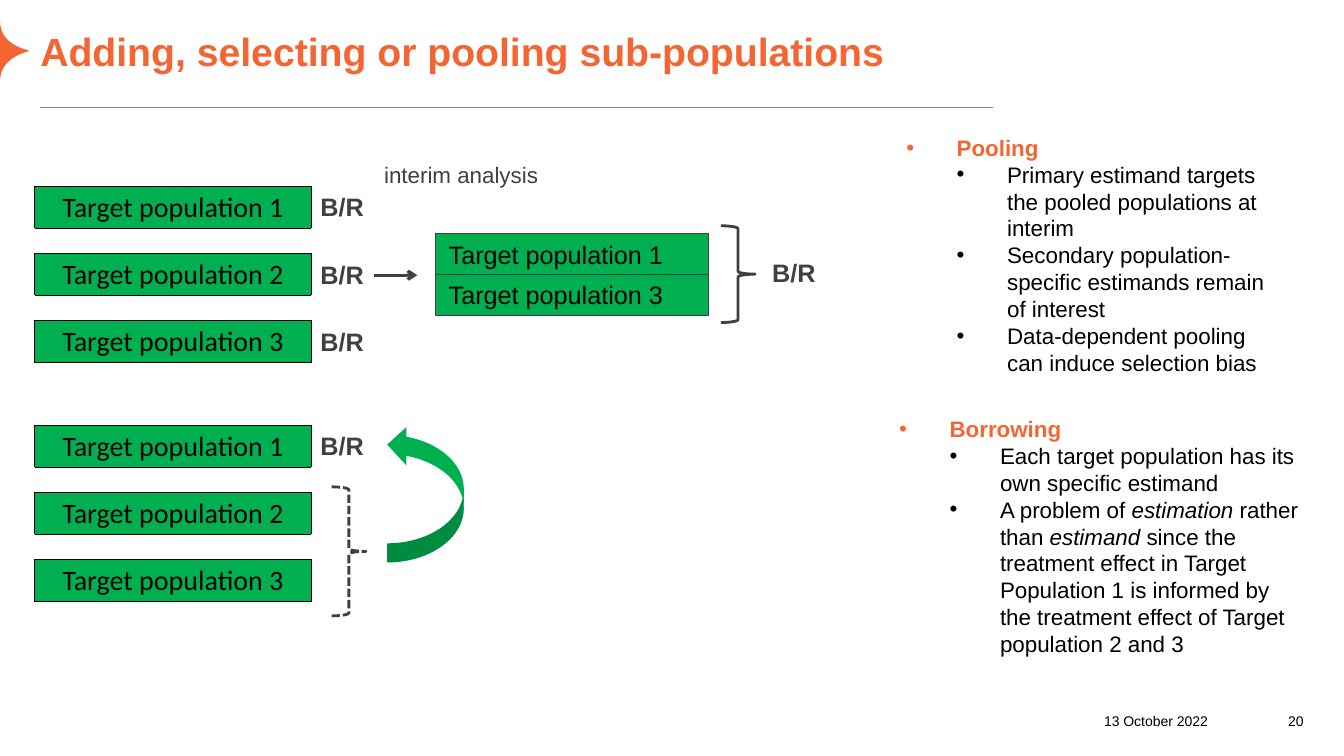
from lxml import etree
from pptx import Presentation
from pptx.dml.color import RGBColor
from pptx.enum.dml import MSO_LINE_DASH_STYLE as Dash
from pptx.enum.shapes import MSO_CONNECTOR as Connector, MSO_SHAPE as Preset
from pptx.enum.text import MSO_ANCHOR as Anchor, PP_ALIGN as Align
from pptx.oxml import parse_xml
from pptx.oxml.ns import nsdecls, qn
from pptx.util import Inches, Pt

# Content: a paragraph is a list of (text, italic) spans
TITLE = "Adding, selecting or pooling sub-populations"
DATE, PAGE_NUMBER = "13 October 2022", "20"
POPULATIONS = ["Target population 1", "Target population 2", "Target population 3"]
POOLED = [POPULATIONS[0], POPULATIONS[2]]
BALANCE, INTERIM = "B/R", "interim analysis"
NOTES = [
    ("Pooling", (8.39, 1.28, 4.28, 2.79), [
        [("Primary estimand targets the pooled populations at interim", False)],
        [("Secondary population-specific estimands remain of interest", False)],
        [("Data-dependent pooling can induce selection bias", False)],
    ]),
    ("Borrowing", (8.32, 4.07, 4.67, 2.79), [
        [("Each target population has its own specific estimand", False)],
        [("A problem of ", False), ("estimation", True), (" rather than ", False),
         ("estimand", True),
         (" since the treatment effect in Target Population 1 is informed by "
          "the treatment effect of Target population 2 and 3", False)],
    ]),
]
ORANGE, GREEN, GREY, BLACK, RULE = "F36633", "00B050", "404040", "000000", "808080"

# Grid, in inches
LEFT, TABLE_WIDTH, TABLE_HEIGHT = 0.34, 2.75, 1.75
ROW = 0.42
GAP = (TABLE_HEIGHT - len(POPULATIONS) * ROW) / (len(POPULATIONS) - 1)
POOL_TOP, BORROW_TOP = 1.85, 4.22
LABEL_LEFT, LABEL_SIZE, LABEL_PITCH = 3.08, (0.76, 0.4), 0.67
POOLED_LEFT, POOLED_TOP, POOLED_WIDTH, POOLED_ROW = 4.32, 2.32, 2.71, 0.405
POOLED_INDENT = 0.13

deck = Presentation()
deck.slide_width, deck.slide_height = Inches(13.33), Inches(7.5)
page = deck.slides.add_slide(deck.slide_layouts[6])


def color(value):
    return RGBColor.from_string(value)


def place(area):
    return [Inches(length) for length in area]


def add_spans(para, spans, size=16, font="Arial", tint=BLACK, bold=False):
    for text, italic in spans:
        span = para.add_run()
        span.text = text
        style = span.font
        style.size, style.name, style.bold, style.italic = Pt(size), font, bold, italic
        style.color.rgb = color(tint)


def add_text(text, area, align=Align.LEFT, anchor=Anchor.TOP, inset=(0, 0), **style):
    frame = page.shapes.add_textbox(*place(area)).text_frame
    frame.word_wrap, frame.vertical_anchor = True, anchor
    frame.margin_left = frame.margin_right = Inches(inset[0])
    frame.margin_top = frame.margin_bottom = Inches(inset[1])
    para = frame.paragraphs[0]
    para.alignment = align
    if text:
        add_spans(para, [(text, False)], **style)
    return frame


def add_label(left, top):
    add_text(BALANCE, (left, top, *LABEL_SIZE), inset=(0.1, 0.05),
             size=18, tint=GREY, bold=True)


def add_preset(preset, area, fill=None, line=None, width=0.75, dash=None):
    shape = page.shapes.add_shape(preset, *place(area))
    shape.shadow.inherit = False
    if fill:
        shape.fill.solid()
        shape.fill.fore_color.rgb = color(fill)
    else:
        shape.fill.background()
    if line:
        shape.line.color.rgb = color(line)
        shape.line.width = Pt(width)
        if dash:
            shape.line.dash_style = dash
    else:
        shape.line.fill.background()
    return shape


def add_line(start, end, tint, width, arrow=False):
    line = page.shapes.add_connector(Connector.STRAIGHT, *place(start + end))
    line.line.color.rgb, line.line.width = color(tint), Pt(width)
    if arrow:
        etree.SubElement(line.line._get_or_add_ln(), qn("a:tailEnd"), type="arrow")
    etree.SubElement(line._element.spPr, qn("a:effectLst"))


def add_borders(cell, sides):
    for side in sides:
        cell._tc.get_or_add_tcPr().append(parse_xml(
            f'<a:ln{side} {nsdecls("a")} w="{Pt(1)}"><a:solidFill>'
            f'<a:srgbClr val="{BLACK}"/></a:solidFill></a:ln{side}>'))


def add_population_table(top):
    count = 2 * len(POPULATIONS) - 1
    table = page.shapes.add_table(
        count, 1, *place((LEFT, top, TABLE_WIDTH, TABLE_HEIGHT))).table
    table.first_row = table.horz_banding = False
    for index in range(count):
        cell, is_gap = table.cell(index, 0), index % 2 == 1
        table.rows[index].height = Inches(GAP if is_gap else ROW)
        cell.margin_left = cell.margin_right = cell.margin_top = Inches(0.01)
        cell.margin_bottom = 0
        cell.vertical_anchor = Anchor.MIDDLE
        para = cell.text_frame.paragraphs[0]
        add_borders(cell, "TB" if is_gap else "LRTB")
        if is_gap:
            cell.fill.background()
            etree.SubElement(para._p, qn("a:endParaRPr"), sz="800")
        else:
            cell.fill.solid()
            cell.fill.fore_color.rgb = color(GREEN)
            para.alignment = Align.CENTER
            add_spans(para, [(POPULATIONS[index // 2], False)], size=20, font="Calibri")


def add_bullet(para, level, spans, **style):
    properties = para._p.get_or_add_pPr()
    properties.set("marL", str(Inches(0.5 + 0.5 * level)))
    properties.set("indent", str(Inches(-0.5)))
    etree.SubElement(properties, qn("a:buFont"), typeface="Arial")
    etree.SubElement(properties, qn("a:buChar"), char="•")
    para.level = level
    add_spans(para, spans, **style)


def curve(start, first, second, end, steps=16):
    for step in range(1, steps + 1):
        t = step / steps
        weights = ((1 - t) ** 3, 3 * t * (1 - t) ** 2, 3 * t * t * (1 - t), t ** 3)
        yield tuple(sum(w * p[axis] for w, p in zip(weights, (start, first, second, end)))
                    for axis in (0, 1))


# Pointed mark at the left edge
upper = list(curve((0, 0.2), (0, 0.36), (0.1, 0.45), (0.28, 0.5)))
lower = list(curve((0.28, 0.51), (0.1, 0.56), (0, 0.66), (0, 0.81)))
builder = page.shapes.build_freeform(0, Inches(0.2), scale=1.0)
builder.add_line_segments([place(point) for point in upper + [(0.29, 0.505)] + lower])
mark = builder.convert_to_shape()
mark.shadow.inherit = False
mark.fill.solid()
mark.fill.fore_color.rgb = color(ORANGE)
mark.line.fill.background()

# Title and footer
add_text(TITLE, (0.4, 0.27, 12.53, 0.47), anchor=Anchor.BOTTOM,
         size=28, tint=ORANGE, bold=True)
add_line((0.4, 1.07), (9.85, 1.07), RULE, 0.75)
for text, left, width in ((DATE, 8.94, 3.04), (PAGE_NUMBER, 12.34, 0.59)):
    add_text(text, (left, 6.94, width, 0.3), align=Align.RIGHT,
             anchor=Anchor.BOTTOM, size=10)

# Pooling diagram
add_population_table(POOL_TOP)
for row in range(len(POPULATIONS)):
    add_label(LABEL_LEFT, POOL_TOP + row * LABEL_PITCH)
add_text(INTERIM, (3.81, 1.6, 2, 0.3), tint=GREY)
add_line((3.71, 2.73), (4.14, 2.73), GREY, 2.25, arrow=True)
for row, name in enumerate(POOLED):
    top = POOLED_TOP + row * POOLED_ROW
    add_preset(Preset.RECTANGLE, (POOLED_LEFT, top, POOLED_WIDTH, POOLED_ROW), GREEN, GREY)
    add_text(name, (POOLED_LEFT + POOLED_INDENT, top + 0.05,
                    POOLED_WIDTH - POOLED_INDENT, 0.3), size=18)
add_preset(Preset.RIGHT_BRACE, (7.15, 2.24, 0.34, 0.96), line=GREY, width=2)
add_label(7.56, 2.5)

# Borrowing diagram
add_population_table(BORROW_TOP)
add_label(LABEL_LEFT, BORROW_TOP)
add_preset(Preset.RIGHT_BRACE, (3.29, 4.83, 0.34, 1.28), line=GREY, width=2,
           dash=Dash.SQUARE_DOT)
add_preset(Preset.CURVED_RIGHT_ARROW, (3.84, BORROW_TOP, 0.76, 1.36), GREEN).rotation = 180

# Bulleted notes
for heading, area, points in NOTES:
    frame = add_text("", area, inset=(0.1, 0.05))
    add_bullet(frame.paragraphs[0], 1, [(heading, False)], tint=ORANGE, bold=True)
    for spans in points:
        add_bullet(frame.add_paragraph(), 2, spans)

deck.save("out.pptx")
